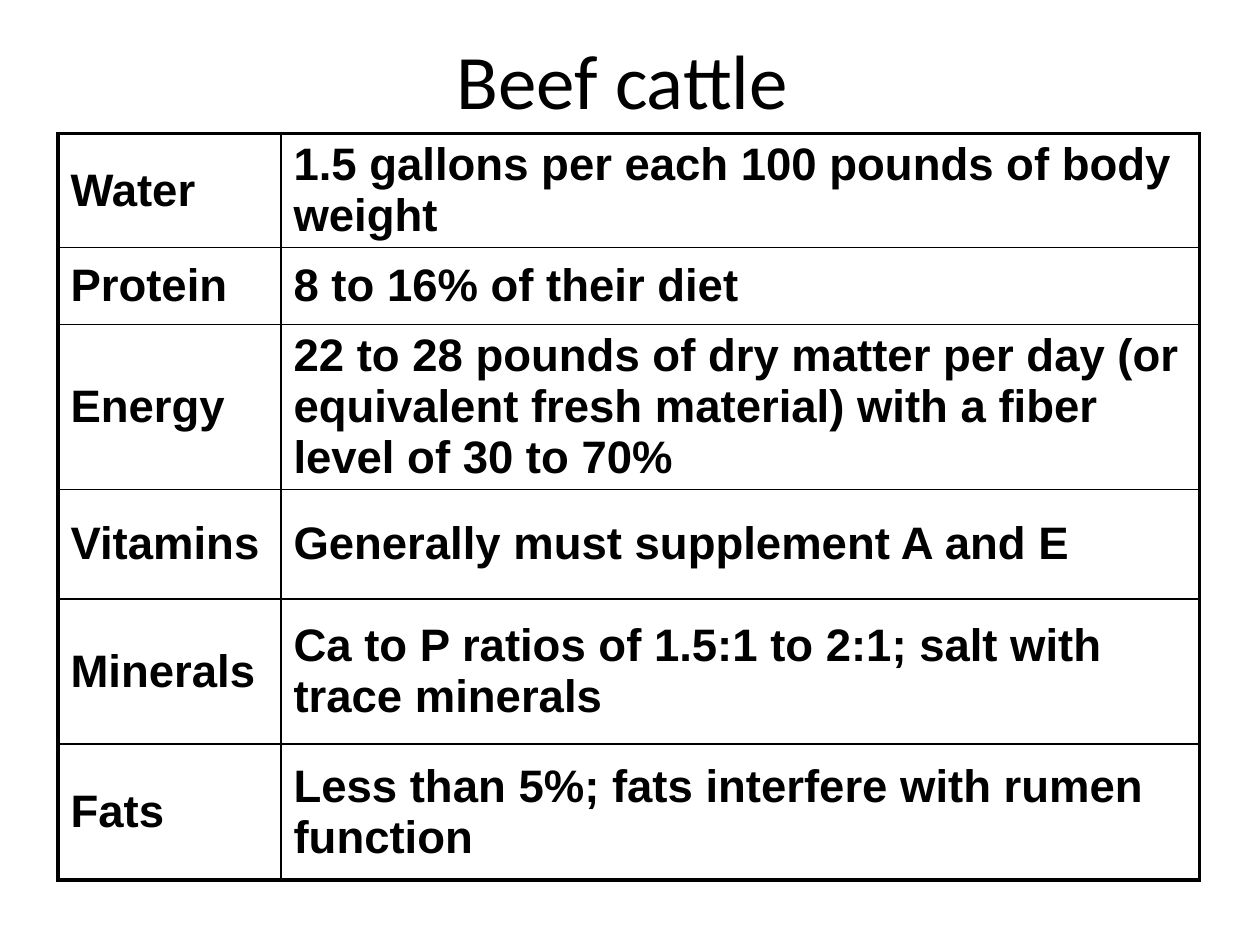
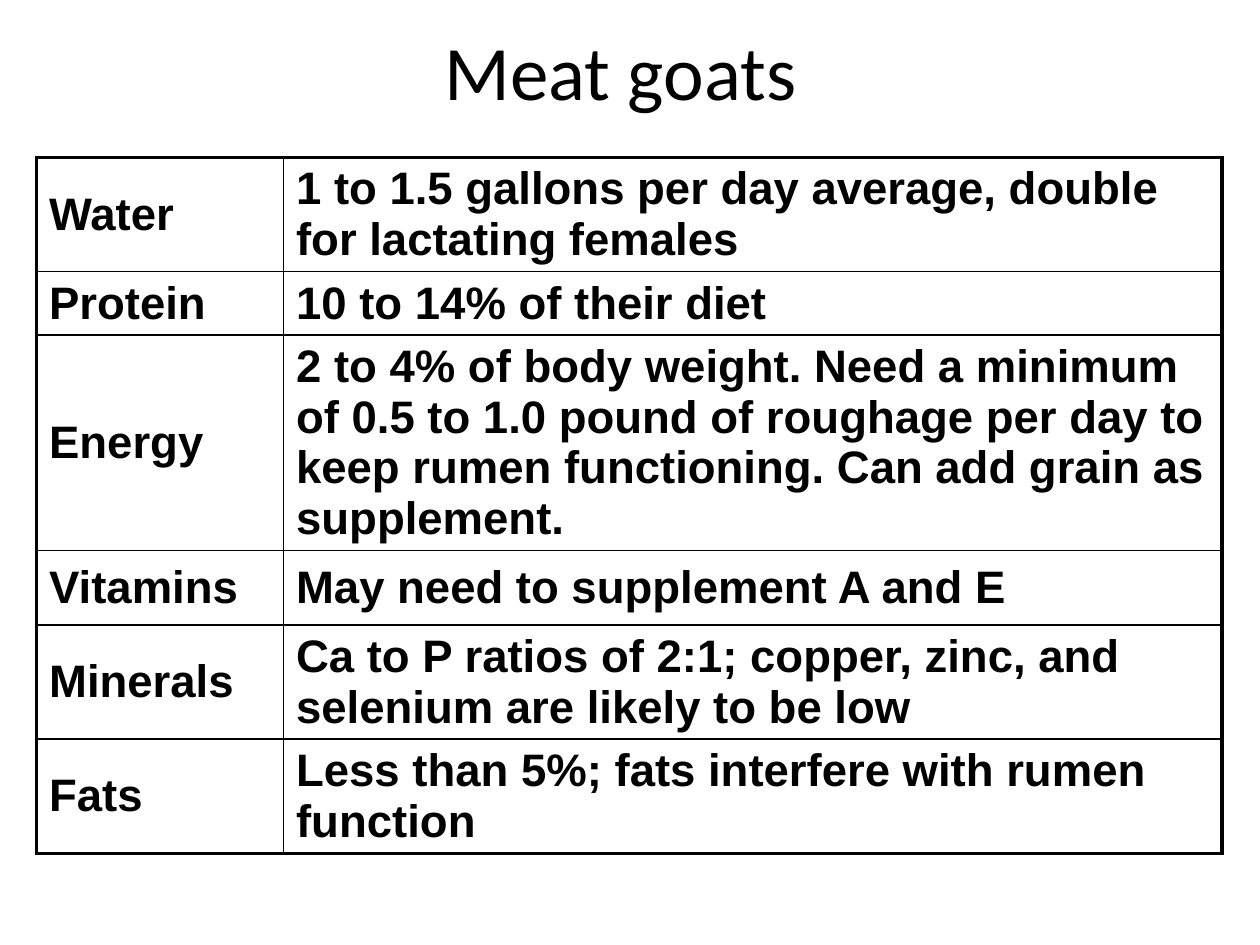
from dataclasses import dataclass

from lxml import etree
from pptx import Presentation
from pptx.dml.color import RGBColor
from pptx.enum import text
from pptx.oxml import ns
from pptx.util import Inches, Pt


@dataclass(frozen=True)
class Theme:
    """Colours, fonts and sizes shared by the slides."""
    ink: str = "000000"
    paper: str = "FFFFFF"
    head: str = "Calibri"
    body: str = "Arial"
    head_size: float = 44
    body_size: float = 26
    pitch: float = 29
    thick: float = 2.25
    thin: float = 1


THEME = Theme()
NEEDS = ("Water", "Protein", "Energy", "Vitamins", "Minerals", "Fats")
SLIDES = (
    {
        "title": "Beef cattle",
        "head": (0.69, 0, 8.5, 1.25),
        "grid": (0.46, 1.06),
        "cols": (1.77, 7.29),
        "rows": (0.66, 0.61, 0.98, 0.87, 1.15, 1.08),
        "facts": (
            "1.5 gallons per each 100 pounds of body weight",
            "8 to 16% of their diet",
            "22 to 28 pounds of dry matter per day (or equivalent fresh "
            "material) with a fiber level of 30 to 70%",
            "Generally must supplement A and E",
            "Ca to P ratios of 1.5:1 to 2:1; salt with trace minerals",
            "Less than 5%; fats interfere with rumen function",
        ),
    },
    {
        "title": "Meat goats",
        "head": (0.35, 0, 9.15, 1.11),
        "grid": (0.29, 1.25),
        "cols": (1.96, 7.45),
        "rows": (0.66, 0.46, 0.84, 0.59, 0.9, 0.83),
        "facts": (
            "1 to 1.5 gallons per day average, double for lactating females",
            "10 to 14% of their diet",
            "2 to 4% of body weight. Need a minimum of 0.5 to 1.0 pound of "
            "roughage per day to keep rumen functioning. Can add grain as "
            "supplement.",
            "May need to supplement A and E",
            "Ca to P ratios of 2:1; copper, zinc, and selenium are likely "
            "to be low",
            "Less than 5%; fats interfere with rumen function",
        ),
    },
)


def style(para, font, size, bold=False):
    """Format the runs of a paragraph."""
    for run in para.runs:
        run.font.name = font
        run.font.size = Pt(size)
        run.font.bold = bold
        run.font.color.rgb = RGBColor.from_string(THEME.ink)


def add_title(slide, box, words):
    """Place the centred slide title in the box."""
    frame = slide.shapes.add_textbox(*map(Inches, box)).text_frame
    frame.word_wrap = True
    frame.vertical_anchor = text.MSO_ANCHOR.MIDDLE
    frame.text = words
    para = frame.paragraphs[0]
    para.alignment = text.PP_ALIGN.CENTER
    style(para, THEME.head, THEME.head_size)


def add_edges(cell, outer):
    """Draw the cell borders, thick on the outer sides."""
    props = cell._tc.get_or_add_tcPr()
    for spot, side in enumerate("LRTB"):
        width = THEME.thick if side in outer else THEME.thin
        line = etree.Element(ns.qn(f"a:ln{side}"), w=str(Pt(width)))
        fill = etree.SubElement(line, ns.qn("a:solidFill"))
        etree.SubElement(fill, ns.qn("a:srgbClr"), val=THEME.ink)
        props.insert(spot, line)


def fill_cell(cell, words, outer):
    """Write and style one table cell."""
    cell.text = words
    cell.vertical_anchor = text.MSO_ANCHOR.MIDDLE
    cell.fill.solid()
    cell.fill.fore_color.rgb = RGBColor.from_string(THEME.paper)
    para = cell.text_frame.paragraphs[0]
    para.line_spacing = Pt(THEME.pitch)
    style(para, THEME.body, THEME.body_size, True)
    add_edges(cell, outer)


def add_grid(slide, spot, cols, rows, facts):
    """Build the table of needs from its top left corner."""
    box = (*spot, sum(cols), sum(rows))
    table = slide.shapes.add_table(
        len(rows), len(cols), *map(Inches, box)).table
    table.first_row = table.horz_banding = False
    for col, width in zip(table.columns, cols):
        col.width = Inches(width)
    for row, height in zip(table.rows, rows):
        row.height = Inches(height)
    last = len(rows) - 1
    for r, pair in enumerate(zip(NEEDS, facts)):
        ends = ("T" if r == 0 else "") + ("B" if r == last else "")
        for c, words in enumerate(pair):
            fill_cell(table.cell(r, c), words, ends + "LR"[c])


def add_slide(deck, data):
    """Add one slide with its title and table."""
    slide = deck.slides.add_slide(deck.slide_layouts[6])
    add_title(slide, data["head"], data["title"])
    add_grid(slide, data["grid"], data["cols"], data["rows"], data["facts"])


def main():
    """Build and save the deck."""
    deck = Presentation()
    deck.slide_width, deck.slide_height = Inches(10), Inches(7.5)
    for data in SLIDES:
        add_slide(deck, data)
    deck.save("out.pptx")


if __name__ == "__main__":
    main()
